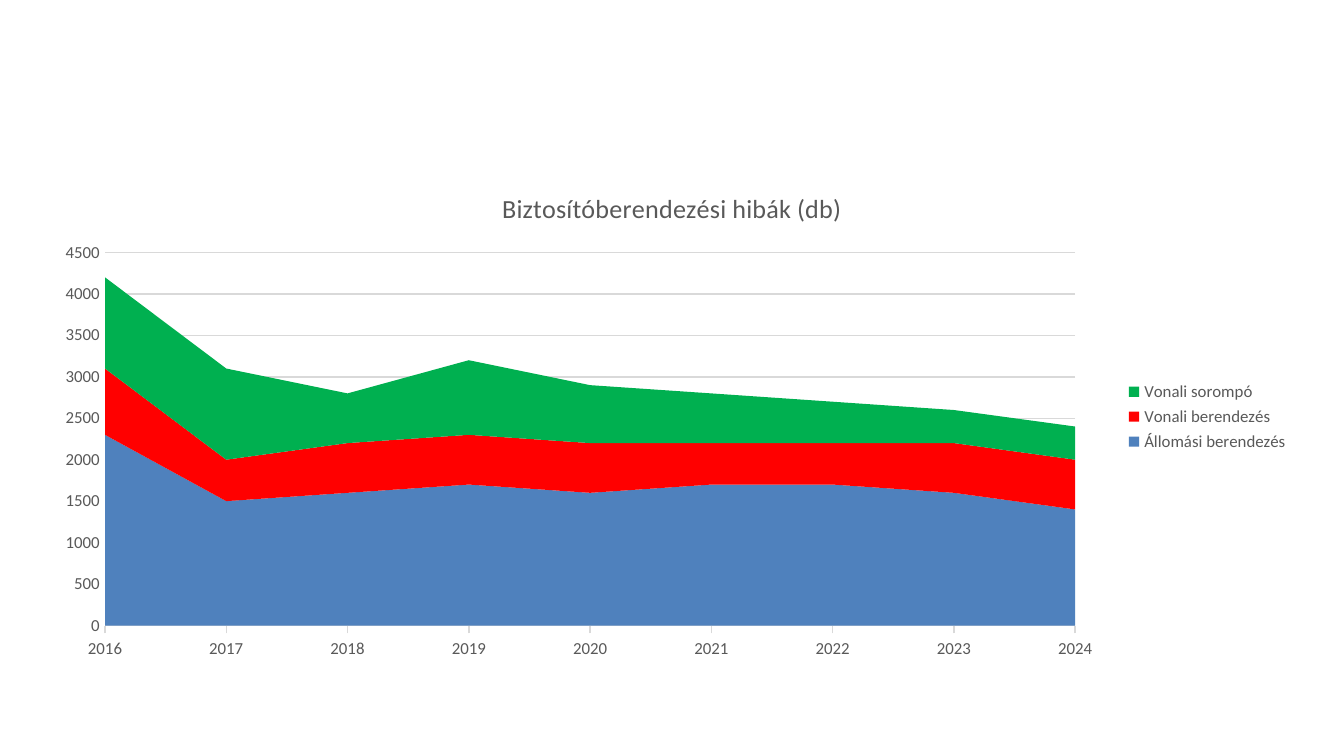
"""Build a slide with a stacked area chart of signalling equipment faults."""
from dataclasses import dataclass

from lxml.etree import SubElement
from pptx import Presentation
from pptx.chart.chart import Chart
from pptx.chart.data import CategoryChartData
from pptx.dml.color import RGBColor
from pptx.enum.chart import XL_CHART_TYPE as ChartType
from pptx.enum.chart import XL_LEGEND_POSITION as LegendPos
from pptx.enum.chart import XL_TICK_MARK as Tick
from pptx.oxml.ns import qn
from pptx.util import Pt

BLACK = RGBColor(0x00, 0x00, 0x00)
GREY = RGBColor(0x59, 0x59, 0x59)
LIGHT = RGBColor(0xD9, 0xD9, 0xD9)
BLUE = RGBColor(0x4F, 0x81, 0xBD)
RED = RGBColor(0xFF, 0x00, 0x00)
GREEN = RGBColor(0x00, 0xB0, 0x50)

YEARS = [str(year) for year in range(2016, 2025)]
PLOT = {"x": 0.05, "y": 0.17, "w": 0.77, "h": 0.75}


@dataclass
class FaultSeries:
    name: str
    values: tuple[int, ...]
    color: RGBColor


SERIES = [
    FaultSeries("Állomási berendezés",
                (2300, 1500, 1600, 1700, 1600, 1700, 1700, 1600, 1400), BLUE),
    FaultSeries("Vonali berendezés",
                (800, 500, 600, 600, 600, 500, 500, 600, 600), RED),
    FaultSeries("Vonali sorompó",
                (1100, 1100, 600, 900, 700, 600, 500, 400, 400), GREEN),
]


def set_attrs(target, values: dict) -> None:
    for name, value in values.items():
        setattr(target, name, value)


def style_font(font, size: float, color: RGBColor = GREY) -> None:
    set_attrs(font, {"name": "Calibri", "size": Pt(size), "bold": False})
    font.color.rgb = color


def style_line(line) -> None:
    line.color.rgb = LIGHT
    line.width = Pt(0.75)


def place_plot(chart: Chart) -> None:
    plot_area = chart.plots[0]._element.getparent()
    for old in plot_area.findall(qn("c:layout")):
        plot_area.remove(old)
    layout = SubElement(plot_area, qn("c:layout"))
    plot_area.insert(0, layout)
    manual = SubElement(layout, qn("c:manualLayout"))
    settings = {"layoutTarget": "inner", "xMode": "edge", "yMode": "edge", **PLOT}
    for tag, value in settings.items():
        SubElement(manual, qn(f"c:{tag}")).set("val", str(value))


def style_axes(chart: Chart) -> None:
    cat, val = chart.category_axis, chart.value_axis
    set_attrs(cat, {"major_tick_mark": Tick.OUTSIDE, "minor_tick_mark": Tick.NONE,
                    "has_major_gridlines": False})
    set_attrs(val, {"major_tick_mark": Tick.NONE, "minor_tick_mark": Tick.NONE,
                    "has_major_gridlines": True, "minimum_scale": 0,
                    "maximum_scale": 4500, "major_unit": 500})
    for axis in (cat, val):
        style_font(axis.tick_labels.font, 9)
    style_line(cat.format.line)
    style_line(val.major_gridlines.format.line)
    val.format.line.fill.background()
    val._element.find(qn("c:crossBetween")).set("val", "midCat")


def add_fault_chart(s) -> None:
    data = CategoryChartData(number_format="General")
    data.categories = YEARS
    for series in SERIES:
        data.add_series(series.name, series.values)
    chart = s.shapes.add_chart(ChartType.AREA_STACKED, Pt(22.5), Pt(90),
                               Pt(675), Pt(266.5), data).chart
    style_font(chart.font, 10, BLACK)
    set_attrs(chart, {"has_title": True, "has_legend": True})
    p = chart.chart_title.text_frame.paragraphs[0]
    r = p.add_run()
    r.text = "Biztosítóberendezési hibák (db)"
    style_font(r.font, 14)
    set_attrs(chart.legend, {"position": LegendPos.RIGHT, "include_in_layout": False})
    style_font(chart.legend.font, 9)
    plot = chart.plots[0]
    plot.vary_by_categories = False
    for drawn, series in zip(plot.series, SERIES):
        drawn.format.fill.solid()
        drawn.format.fill.fore_color.rgb = series.color
    style_axes(chart)
    place_plot(chart)


def main() -> None:
    prs = Presentation()
    set_attrs(prs, {"slide_width": Pt(720), "slide_height": Pt(405)})
    s = prs.slides.add_slide(prs.slide_layouts[6])
    add_fault_chart(s)
    prs.save("out.pptx")


if __name__ == "__main__":
    main()
